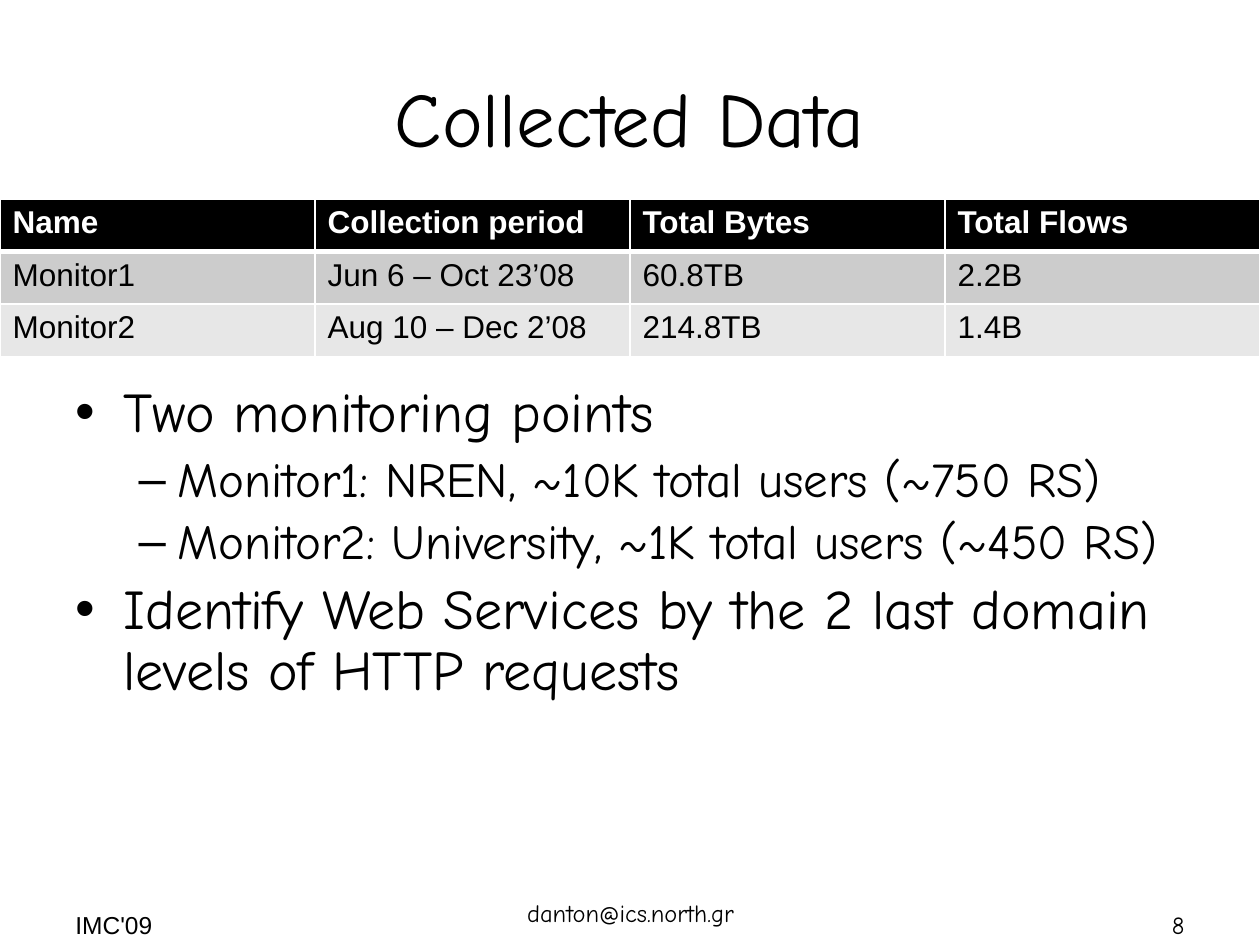
from dataclasses import dataclass

from lxml.etree import SubElement
from pptx import Presentation
from pptx.dml.color import RGBColor
from pptx.enum.text import MSO_ANCHOR, MSO_AUTO_SIZE, PP_ALIGN
from pptx.oxml import parse_xml
from pptx.oxml.ns import nsdecls, qn
from pptx.util import Inches, Pt

COLORS = {"text": "000000", "header": "000000", "line": "FFFFFF",
          "header_text": "FFFFFF", "odd": "CCCCCC", "even": "E7E7E7"}
HAND, SANS = "Comic Neue", "Arial"


@dataclass
class Level:
    bullet: str
    size: int
    margin: float
    hanging: float


@dataclass
class FooterItem:
    text: str
    left: float
    top: float
    width: float
    align: PP_ALIGN
    font: str


LEVELS = [Level("•", 32, 0.38, 0.38), Level("–", 28, 0.81, 0.31)]
POINTS = [
    (0, "Two monitoring points"),
    (1, "Monitor1: NREN, ~10K total users (~750 RS)"),
    (1, "Monitor2: University, ~1K total users (~450 RS)"),
    (0, "Identify Web Services by the 2 last domain levels of HTTP requests"),
]
ROWS = [
    ("Name", "Collection period", "Total Bytes", "Total Flows"),
    ("Monitor1", "Jun 6 – Oct 23’08", "60.8TB", "2.2B"),
    ("Monitor2", "Aug 10 – Dec 2’08", "214.8TB", "1.4B"),
]
FOOTER = [
    FooterItem("8", 7.17, 7.17, 2.33, PP_ALIGN.RIGHT, HAND),
    FooterItem("danton@ics.north.gr", 3.42, 7.08, 3.17, PP_ALIGN.CENTER, HAND),
    FooterItem("IMC'09", 0.5, 7.17, 2.33, PP_ALIGN.LEFT, SANS),
]


def place(sp, left: float, top: float, width: float, height: float) -> None:
    box = {"left": left, "top": top, "width": width, "height": height}
    for name, value in box.items():
        setattr(sp, name, Inches(value))


def write(p, text: str, size: int, font: str, color: str = "text", bold: bool = False) -> None:
    r = p.add_run()
    r.text = text
    for name, value in {"size": Pt(size), "name": font, "bold": bold}.items():
        setattr(r.font, name, value)
    r.font.color.rgb = RGBColor.from_string(COLORS[color])


def add_point(p, depth: int, text: str) -> None:
    level = LEVELS[depth]
    p.level, p.line_spacing, p.space_before = depth, 0.9, Pt(level.size * 0.2)
    pPr = p._p.get_or_add_pPr()
    pPr.set("marL", str(Inches(level.margin)))
    pPr.set("indent", str(-Inches(level.hanging)))
    SubElement(pPr, qn("a:buChar"), char=level.bullet)
    write(p, text, level.size, HAND)


def set_borders(cell, widths: dict[str, float]) -> None:
    tcPr = cell._tc.get_or_add_tcPr()
    for i, (side, width) in enumerate(widths.items()):
        tcPr.insert(i, parse_xml(
            f'<a:ln{side} {nsdecls("a")} w="{Pt(width)}"><a:solidFill>'
            f'<a:srgbClr val="{COLORS["line"]}"/></a:solidFill></a:ln{side}>'))


def add_data_table(s) -> None:
    table = s.shapes.add_table(len(ROWS), len(ROWS[0]), Inches(0), Inches(1.58),
                               Inches(10), Inches(1.25)).table
    for i, row in enumerate(ROWS):
        head = i == 0
        fill = ("header", "odd", "even")[i]
        for j, text in enumerate(row):
            cell = table.cell(i, j)
            cell.fill.solid()
            cell.fill.fore_color.rgb = RGBColor.from_string(COLORS[fill])
            set_borders(cell, {"L": 1, "R": 1, "T": 3 if i == 1 else 1, "B": 3 if head else 1})
            write(cell.text_frame.paragraphs[0], text, 18, SANS,
                  "header_text" if head else "text", head)


def add_footer(s, item: FooterItem) -> None:
    sp = s.shapes.add_textbox(Inches(item.left), Inches(item.top),
                              Inches(item.width), Inches(0.52))
    tf = sp.text_frame
    tf.word_wrap = True
    p = tf.paragraphs[0]
    p.alignment = item.align
    write(p, item.text, 14, item.font)


def main() -> None:
    prs = Presentation()
    prs.slide_width, prs.slide_height = Inches(10), Inches(7.5)
    s = prs.slides.add_slide(prs.slide_layouts[1])

    # Title
    title = s.shapes.title
    place(title, 0.5, 0.3, 9, 1.25)
    tf = title.text_frame
    tf.auto_size, tf.vertical_anchor = MSO_AUTO_SIZE.NONE, MSO_ANCHOR.MIDDLE
    tf.paragraphs[0].alignment = PP_ALIGN.CENTER
    write(tf.paragraphs[0], "Collected Data", 44, HAND)

    # Bullet list
    body = s.placeholders[1]
    place(body, 0.5, 3, 9, 3.92)
    tf = body.text_frame
    tf.auto_size = MSO_AUTO_SIZE.NONE
    for i, (depth, text) in enumerate(POINTS):
        add_point(tf.add_paragraph() if i else tf.paragraphs[0], depth, text)

    # Footer and table
    for item in FOOTER:
        add_footer(s, item)
    add_data_table(s)

    prs.save("out.pptx")


if __name__ == "__main__":
    main()
